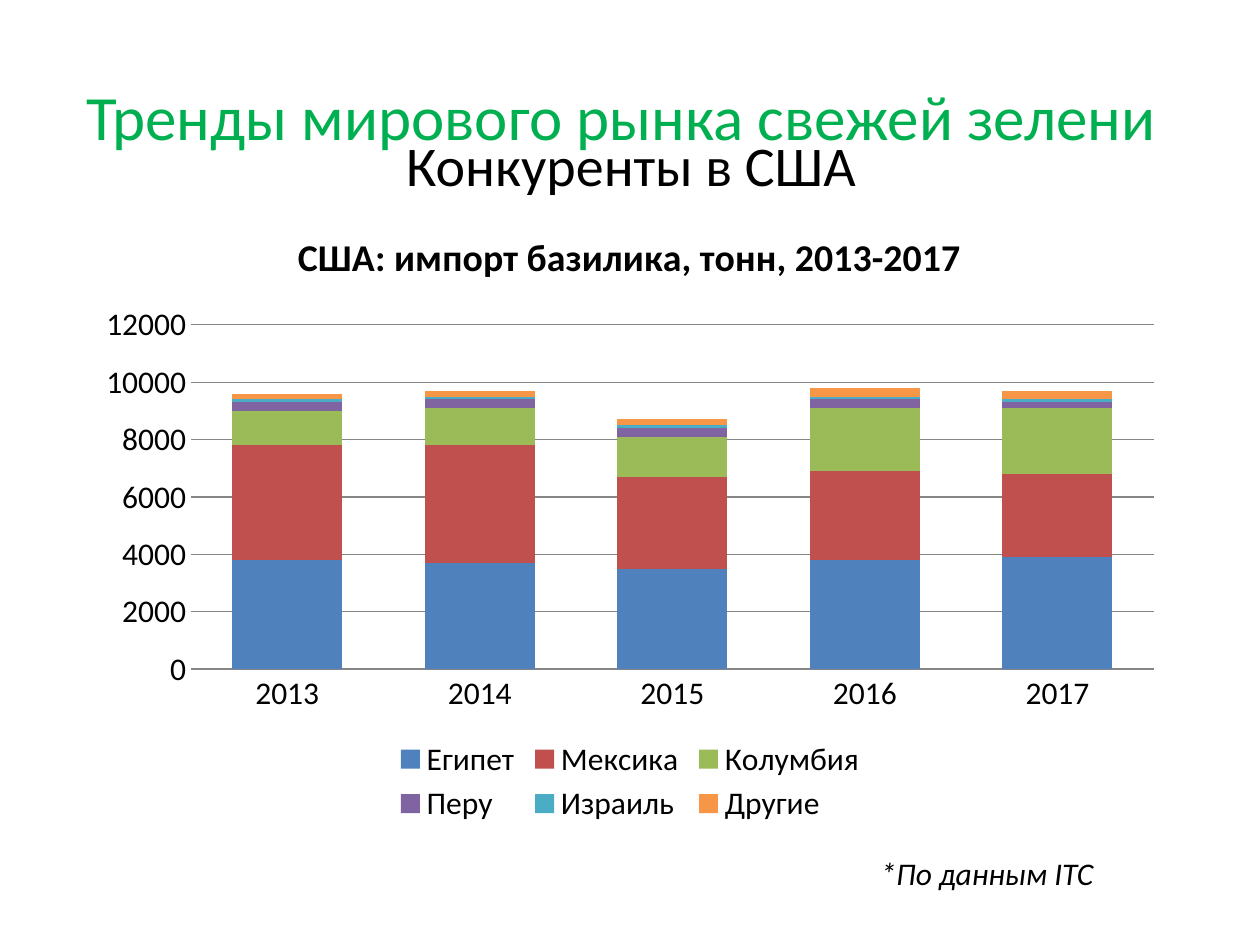
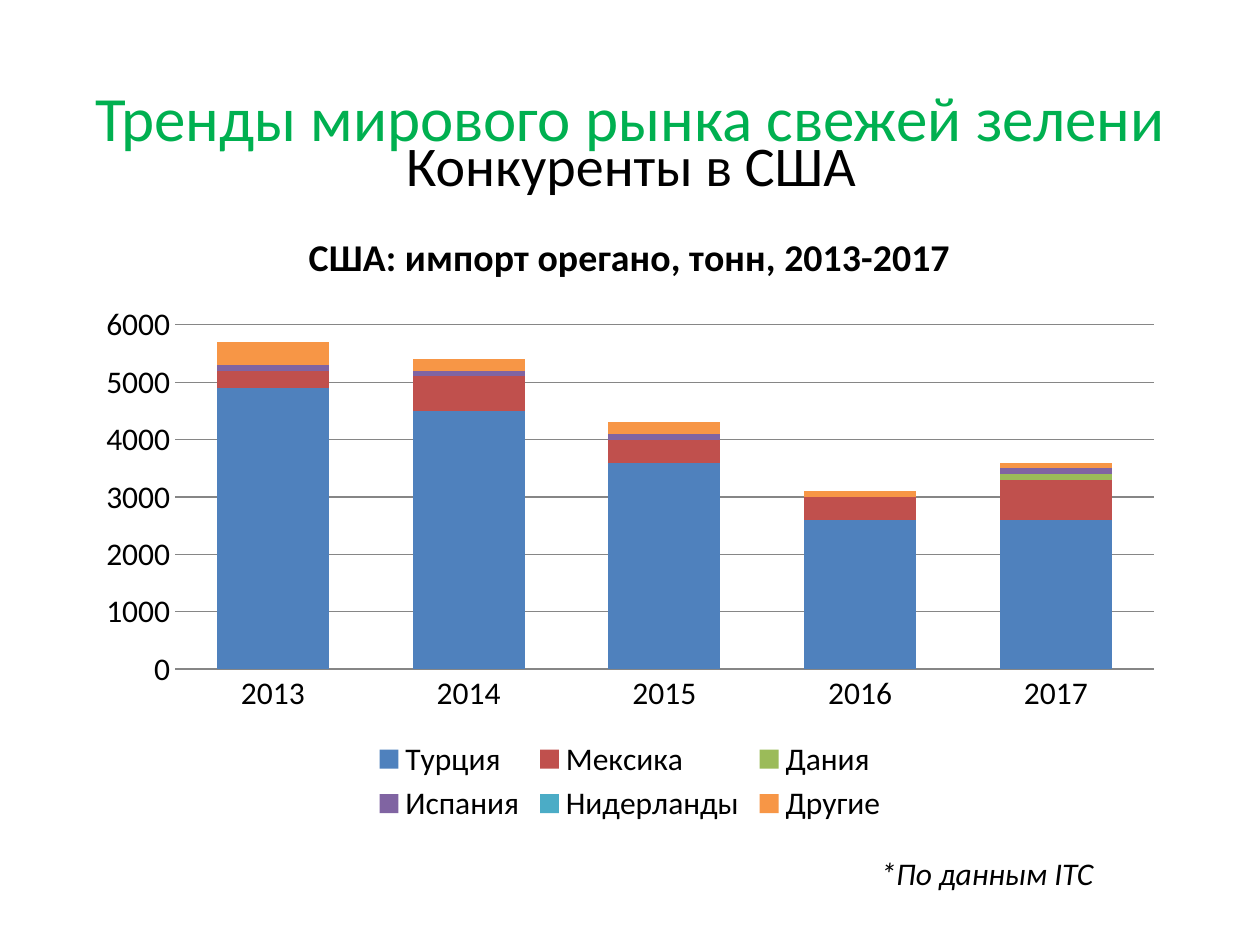
import pptx
import pptx.util
import pptx.chart.data
import pptx.dml.color
import pptx.enum.chart
import pptx.enum.text

Inches = pptx.util.Inches
Pt = pptx.util.Pt
ALIGN = pptx.enum.text.PP_ALIGN
ANCHOR = pptx.enum.text.MSO_ANCHOR

FONT = "Calibri"
COLORS = {"title": "00B050", "text": "000000", "grid": "868686"}
SERIES = ["4F81BD", "C0504D", "9BBB59", "8064A2", "4BACC6", "F79646"]
YEARS = ["2013", "2014", "2015", "2016", "2017"]

BASIL = {
    "Египет": [3800, 3700, 3500, 3800, 3900],
    "Мексика": [4000, 4100, 3200, 3100, 2900],
    "Колумбия": [1200, 1300, 1400, 2200, 2300],
    "Перу": [300, 300, 300, 300, 200],
    "Израиль": [100, 100, 100, 100, 100],
    "Другие": [200, 200, 200, 300, 300],
}
OREGANO = {
    "Турция": [4900, 4500, 3600, 2600, 2600],
    "Мексика": [300, 600, 400, 400, 700],
    "Дания": [0, 0, 0, 0, 100],
    "Испания": [100, 100, 100, 0, 100],
    "Нидерланды": [0, 0, 0, 0, 0],
    "Другие": [400, 200, 200, 100, 100],
}


def paint(color, value):
    color.rgb = pptx.dml.color.RGBColor.from_string(value)


def style(font, size, color=COLORS["text"], bold=False, italic=False):
    font.name, font.size = FONT, Pt(size)
    font.bold, font.italic = bold, italic
    paint(font.color, color)


def add_text(slide, text, box, size, color=COLORS["text"], align=ALIGN.CENTER,
             anchor=ANCHOR.TOP, before=0, italic=False, wrap=True):
    frame = slide.shapes.add_textbox(*map(Inches, box)).text_frame
    frame.text = text
    frame.word_wrap = wrap
    frame.vertical_anchor = anchor
    para = frame.paragraphs[0]
    para.alignment = align
    para.space_before = Pt(before)
    style(para.runs[0].font, size, color, italic=italic)


def add_stack(slide, title, values, step):
    data = pptx.chart.data.CategoryChartData()
    data.categories = YEARS
    for name, tons in values.items():
        data.add_series(name, tons)
    chart = slide.shapes.add_chart(
        pptx.enum.chart.XL_CHART_TYPE.COLUMN_STACKED,
        *map(Inches, (0.67, 1.62, 8.66, 4.96)), data).chart
    style(chart.font, 18)

    chart.has_title = True
    head = chart.chart_title.text_frame
    head.text = title
    style(head.paragraphs[0].runs[0].font, 21.6, bold=True)
    chart.chart_title.include_in_layout = False

    chart.has_legend = True
    chart.legend.position = pptx.enum.chart.XL_LEGEND_POSITION.BOTTOM
    chart.legend.include_in_layout = False

    plot = chart.plots[0]
    plot.gap_width, plot.overlap = 75, 100
    plot.vary_by_categories = False
    for series, color in zip(plot.series, SERIES):
        series.format.fill.solid()
        paint(series.format.fill.fore_color, color)

    years, tons = chart.category_axis, chart.value_axis
    for axis in (years, tons):
        axis.major_tick_mark = pptx.enum.chart.XL_TICK_MARK.NONE
        axis.minor_tick_mark = pptx.enum.chart.XL_TICK_MARK.NONE
    tons.minimum_scale, tons.maximum_scale = 0, 6 * step
    tons.major_unit = step
    tons.has_major_gridlines = True
    tons.format.line.fill.background()
    for line in (years.format.line, tons.major_gridlines.format.line):
        line.width = Pt(0.75)
        paint(line.color, COLORS["grid"])


def add_slide(deck, corner, title, values, step):
    slide = deck.slides.add_slide(deck.slide_layouts[6])
    add_text(slide, "Тренды мирового рынка свежей зелени", (*corner, 9, 1.25),
             36, COLORS["title"], anchor=ANCHOR.MIDDLE)
    add_text(slide, "Конкуренты в США", (0.51, 0.99, 9, 0.71), 32, before=6.4)
    add_stack(slide, title, values, step)
    add_text(slide, "*По данным ITC", (6.89, 6.73, 1.92, 0.4), 18,
             align=ALIGN.LEFT, italic=True, wrap=False)


def main():
    deck = pptx.Presentation()
    deck.slide_width, deck.slide_height = Inches(10), Inches(7.5)
    add_slide(deck, (0.43, 0.29), "США: импорт базилика, тонн, 2013-2017",
              BASIL, 2000)
    add_slide(deck, (0.5, 0.3), "США: импорт орегано, тонн, 2013-2017",
              OREGANO, 1000)
    deck.save("out.pptx")


if __name__ == "__main__":
    main()
